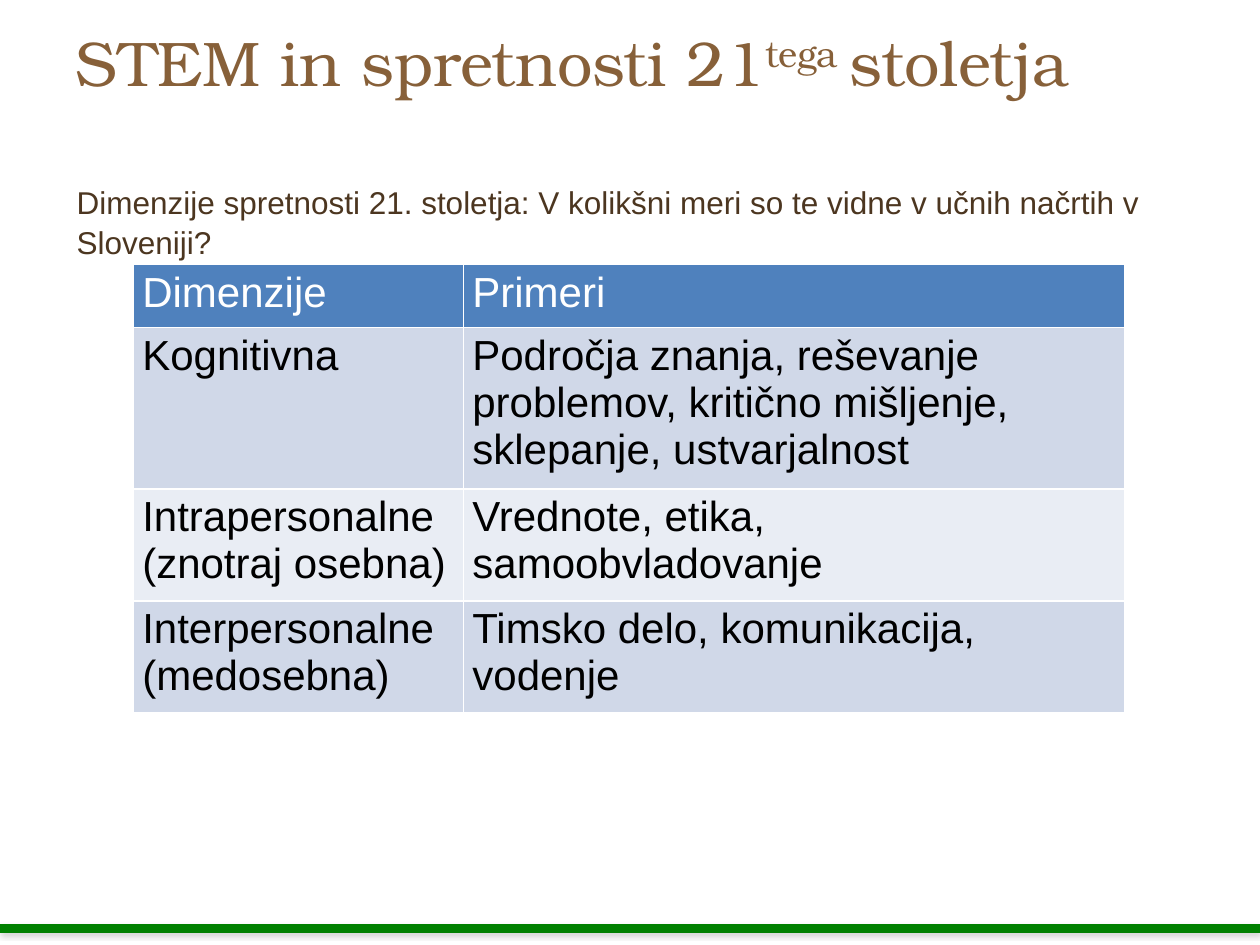
"""Build the slide on STEM and 21st-century skills."""
from lxml import etree
from pptx import Presentation
from pptx.dml.color import RGBColor
from pptx.enum.shapes import MSO_CONNECTOR
from pptx.enum.text import MSO_ANCHOR
from pptx.oxml.ns import qn
from pptx.util import Inches, Pt

STRAIGHT = MSO_CONNECTOR.STRAIGHT
MIDDLE, TOP = MSO_ANCHOR.MIDDLE, MSO_ANCHOR.TOP

TITLE = [("STEM in spretnosti 21", 0), ("tega ", 30), ("stoletja", 0)]
QUESTION = [("Dimenzije spretnosti 21. stoletja: V kolikšni meri so te vidne "
             "v učnih načrtih v Sloveniji?", 0)]
DIMENSIONS = [
    ("Dimenzije", "Primeri"),
    ("Kognitivna", "Področja znanja, reševanje problemov, kritično mišljenje, "
                   "sklepanje, ustvarjalnost"),
    ("Intrapersonalne (znotraj osebna)", "Vrednote, etika, samoobvladovanje"),
    ("Interpersonalne\n(medosebna)", "Timsko delo, komunikacija, vodenje"),
]
COLUMN_WIDTHS = [2.62, 5.25]
ROW_HEIGHTS = [0.5, 1.27, 0.89, 0.89]

THEME = {
    "title": {"name": "TeX Gyre Bonum", "size": Pt(36), "color": "876039"},
    "question": {"name": "Arial", "size": Pt(18), "color": "4C3620"},
    "header": {"name": "Arial", "size": Pt(24), "color": "FFFFFF", "bold": False},
    "cell": {"name": "Arial", "size": Pt(24), "color": "000000", "bold": False},
    "header_fill": "4F81BD",
    "band_fills": ["D0D8E8", "E9EDF4"],
    "border": "FFFFFF",
    "footer": "008000",
    "shadow": "808080",
}
CELL_FORMAT = {
    "margin_left": Inches(0.07), "margin_right": Inches(0.07),
    "margin_top": Inches(0.04), "margin_bottom": Inches(0.04),
    "vertical_anchor": TOP,
}


def apply_format(target, values):
    for attribute, value in values.items():
        if attribute == "color":
            target.color.rgb = RGBColor.from_string(value)
        else:
            setattr(target, attribute, value)


def add_child(parent, tag, **attributes):
    return etree.SubElement(parent, qn(tag), attributes)


def add_footer_line(slide):
    line = slide.shapes.add_connector(
        STRAIGHT, Inches(0), Inches(7.37), Inches(10), Inches(7.37))
    apply_format(line.line, {"width": Pt(4.75)})
    line.line.color.rgb = RGBColor.from_string(THEME["footer"])
    effects = add_child(line._element.spPr, "a:effectLst")
    shadow = add_child(effects, "a:outerShdw", blurRad=str(Pt(3.1)),
                       dist=str(Pt(1.6)), dir="5400000", rotWithShape="0")
    color = add_child(shadow, "a:srgbClr", val=THEME["shadow"])
    add_child(color, "a:alpha", val="38000")


def add_text(slide, runs, box, style, anchor, line_spacing):
    frame = slide.shapes.add_textbox(*map(Inches, box)).text_frame
    apply_format(frame, {"word_wrap": True, "vertical_anchor": anchor})
    paragraph = frame.paragraphs[0]
    paragraph.line_spacing = line_spacing
    for wording, raised_percent in runs:
        run = paragraph.add_run()
        run.text = wording
        apply_format(run.font, THEME[style])
        if raised_percent:
            run._r.get_or_add_rPr().set("baseline", str(raised_percent * 1000))


def add_borders(cell):
    properties = cell._tc.get_or_add_tcPr()
    for position, side in enumerate("LRTB"):
        border = etree.Element(qn(f"a:ln{side}"), w=str(Pt(1)))
        fill = add_child(border, "a:solidFill")
        add_child(fill, "a:srgbClr", val=THEME["border"])
        properties.insert(position, border)


def add_dimensions_table(slide):
    table = slide.shapes.add_table(
        len(DIMENSIONS), len(COLUMN_WIDTHS), Inches(1.06), Inches(2.1),
        Inches(sum(COLUMN_WIDTHS)), Inches(sum(ROW_HEIGHTS))).table
    for column, width in zip(table.columns, COLUMN_WIDTHS):
        column.width = Inches(width)
    for row, height in zip(table.rows, ROW_HEIGHTS):
        row.height = Inches(height)
    for row_index, wordings in enumerate(DIMENSIONS):
        style = "cell" if row_index else "header"
        fill = THEME["band_fills"][(row_index - 1) % 2] if row_index else THEME["header_fill"]
        for column_index, wording in enumerate(wordings):
            cell = table.cell(row_index, column_index)
            cell.text = wording
            apply_format(cell, CELL_FORMAT)
            cell.fill.solid()
            cell.fill.fore_color.rgb = RGBColor.from_string(fill)
            add_borders(cell)
            for paragraph in cell.text_frame.paragraphs:
                for run in paragraph.runs:
                    apply_format(run.font, THEME[style])


def main():
    presentation = Presentation()
    apply_format(presentation, {"slide_width": Inches(10), "slide_height": Inches(7.5)})
    slide = presentation.slides.add_slide(presentation.slide_layouts[6])
    add_footer_line(slide)
    add_text(slide, TITLE, (0.5, 0.05, 9, 0.87), "title", MIDDLE, 1.0)
    add_text(slide, QUESTION, (0.51, 1.39, 9, 5.23), "question", TOP, 1.05)
    add_dimensions_table(slide)
    presentation.save("out.pptx")


if __name__ == "__main__":
    main()
